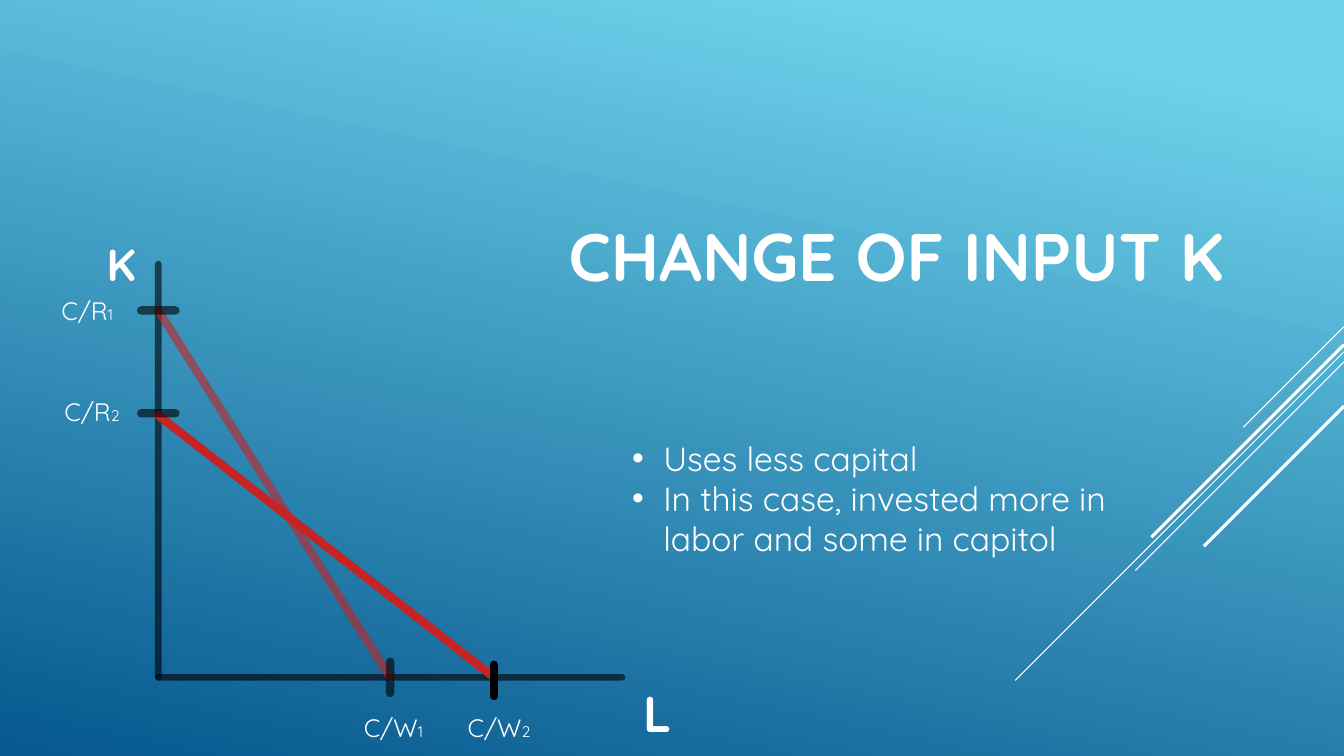
import pptx
import pptx.util
import pptx.dml.color
import pptx.enum.shapes
import pptx.enum.text
import pptx.oxml.ns
import lxml.etree

Inches = pptx.util.Inches
qn = pptx.oxml.ns.qn

COLORS = {"sky": "6ED2EB", "deep": "06588E", "white": "FFFFFF",
          "axis": "000000", "cost": "C62324"}
FONT = "Quicksand"
TITLE = "CHANGE OF INPUT K"
BULLETS = ["Uses less capital",
           "In this case, invested more in labor and some in capitol"]

# Decorative diagonals from the right edge: top, horizontal run, width
DIAGONALS = [(3.24, 1, 0.75), (3.49, 3.26, 0.75), (3.59, 2.07, 0.75),
             (3.42, 1.91, 2.25), (4.03, 1.39, 2.25)]

# Graph geometry
ORIGIN_X, ORIGIN_Y = 1.57, 6.72
AXIS_TOP, AXIS_RIGHT = 2.62, 6.17
TICK = 0.17
FADED = 60

# Cost lines: K intercept, L intercept, line start, L tick centre, opacities of line and L tick
COST_LINES = [(3.08, 3.87, 3.08, 6.72, FADED, FADED),
              (4.10, 4.90, 4.12, 6.75, 100, 100)]

# Labels: left, top, width, height, [(text, size)], bold
LABELS = [
    (6.28, 6.72, 0.54, 0.71, [("L", 36)], True),
    (0.96, 2.30, 0.61, 0.64, [("K", 32)], True),
    (0.51, 2.88, 0.89, 0.40, [("C/R", 18), ("1", 11)], False),
    (3.51, 7.02, 1.03, 0.40, [("C/W", 18), ("1", 11)], False),
    (0.54, 3.88, 0.89, 0.40, [("C/R", 18), ("2", 11)], False),
    (4.54, 7.02, 1.03, 0.40, [("C/W", 18), ("2", 11)], False),
]


def rgb(name):
    return pptx.dml.color.RGBColor.from_string(COLORS[name])


def add_line(page, start, end, color, width, opacity=100, cap="rnd"):
    line = page.shapes.add_connector(
        pptx.enum.shapes.MSO_CONNECTOR.STRAIGHT,
        *[Inches(value) for value in (*start, *end)])
    line.line.color.rgb = rgb(color)
    line.line.width = pptx.util.Pt(width)
    outline = line.line._get_or_add_ln()
    outline.set("cap", cap)
    if opacity < 100:
        fill = outline.find(".//" + qn("a:srgbClr"))
        lxml.etree.SubElement(fill, qn("a:alpha"), val=str(opacity * 1000))
    lxml.etree.SubElement(line._element.spPr, qn("a:effectLst"))


def add_span(para, text, size, bold=False):
    span = para.add_run()
    span.text = text
    formats = {"name": FONT, "size": pptx.util.Pt(size), "bold": bold}
    for key, value in formats.items():
        setattr(span.font, key, value)
    span.font.color.rgb = rgb("white")


def add_box(page, *place):
    box = page.shapes.add_textbox(*[Inches(value) for value in place])
    frame = box.text_frame
    frame.word_wrap = True
    frame.auto_size = pptx.enum.text.MSO_AUTO_SIZE.SHAPE_TO_FIT_TEXT
    return frame


deck = pptx.Presentation()
deck.slide_width, deck.slide_height = Inches(13.33), Inches(7.5)
page = deck.slides.add_slide(deck.slide_layouts[5])

# Background gradient
fill = page.background.fill
fill.gradient()
fill.gradient_angle = 360 - 102
for stop, (position, color) in zip(fill.gradient_stops,
                                   [(0.1, "sky"), (1, "deep")]):
    stop.position = position
    stop.color.rgb = rgb(color)

# Diagonals, all at 45 degrees
for top, run, width in DIAGONALS:
    add_line(page, (13.33, top), (13.33 - run, top + run), "white", width,
             cap="flat")

# Title
title = page.shapes.title
place = {"left": 5.54, "top": 1.7, "width": 6.94, "height": 1.65}
for key, value in place.items():
    setattr(title, key, Inches(value))
frame = title.text_frame
settings = {"word_wrap": True,
            "auto_size": pptx.enum.text.MSO_AUTO_SIZE.NONE,
            "vertical_anchor": pptx.enum.text.MSO_ANCHOR.MIDDLE}
for key, value in settings.items():
    setattr(frame, key, value)
frame.paragraphs[0].alignment = pptx.enum.text.PP_ALIGN.LEFT
add_span(frame.paragraphs[0], TITLE, 48, True)

# Axes
for end in [(ORIGIN_X, AXIS_TOP), (AXIS_RIGHT, ORIGIN_Y)]:
    add_line(page, (ORIGIN_X, ORIGIN_Y), end, "axis", 4.75, FADED)

# Cost lines with a tick at each intercept
for k_tick, l_tick, start, tick_y, opacity, tick_opacity in COST_LINES:
    add_line(page, (ORIGIN_X, start), (l_tick, ORIGIN_Y), "cost", 6, opacity)
    add_line(page, (ORIGIN_X - TICK, k_tick), (ORIGIN_X + TICK, k_tick),
             "axis", 6, FADED)
    add_line(page, (l_tick, tick_y + 0.155), (l_tick, tick_y - 0.155),
             "axis", 6, tick_opacity)

# Labels
for *place, spans, bold in LABELS:
    para = add_box(page, *place).paragraphs[0]
    for text, size in spans:
        add_span(para, text, size, bold)

# Bullets
frame = add_box(page, 6.17, 4.29, 5.19, 1.31)
for index, text in enumerate(BULLETS):
    para = frame.add_paragraph() if index else frame.paragraphs[0]
    add_span(para, text, 24)
    props = para._p.get_or_add_pPr()
    props.set("marL", str(Inches(0.31)))
    props.set("indent", str(Inches(-0.31)))
    lxml.etree.SubElement(props, qn("a:buFont"), typeface="Arial")
    lxml.etree.SubElement(props, qn("a:buChar"), char="•")

deck.save("out.pptx")
